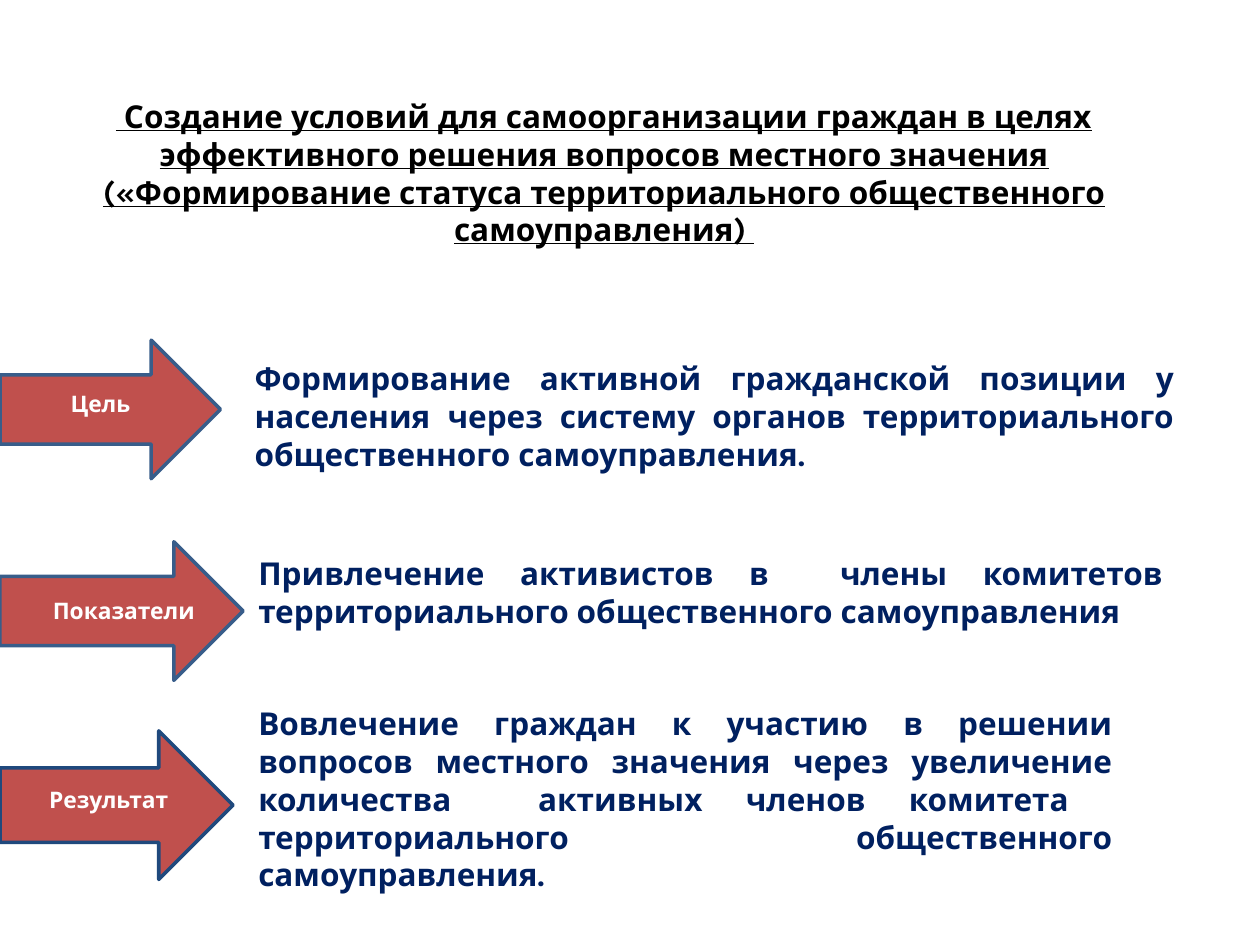
"""Build a slide with a goal, indicators and a result for local self-government."""
import dataclasses
import typing

import pptx
import pptx.dml.color
import pptx.enum.shapes
import pptx.enum.text
import pptx.util

Inches = pptx.util.Inches
Align = pptx.enum.text.PP_ALIGN
Box = typing.Tuple[float, float, float, float]

FONT = "Karla"
HUES = {
    "red": "C0504D",
    "steel": "385D8A",
    "blue": "1F497D",
    "navy": "002060",
    "black": "000000",
    "white": "FFFFFF",
}
TITLE = (
    " Создание условий для самоорганизации граждан в целях эффективного решения "
    "вопросов местного значения («Формирование статуса территориального "
    "общественного самоуправления) "
)


@dataclasses.dataclass(frozen=True)
class Step:
    """One arrow with its label and statement."""

    label: str
    text: str
    arrow: Box
    tag: Box
    body: Box
    edge: str = "steel"


STEPS = [
    Step(
        "Цель ",
        "Формирование активной гражданской позиции у населения через систему "
        "органов территориального общественного самоуправления.",
        (0, 2.7, 1.75, 1.1), (-0.04, 3.04, 1.72, 0.31), (1.93, 2.8, 7.48, 1.01),
    ),
    Step(
        "Показатели ",
        "Привлечение активистов в  члены комитетов территориального "
        "общественного самоуправления",
        (0, 4.3, 1.93, 1.1), (0, 4.69, 2.01, 0.31), (1.96, 4.35, 7.36, 0.7),
    ),
    Step(
        "Результат ",
        "Вовлечение граждан к участию в решении вопросов местного значения через "
        "увеличение количества  активных членов комитета  территориального "
        "общественного самоуправления.",
        (0, 5.8, 1.85, 1.18), (0, 6.19, 1.77, 0.31), (1.96, 5.54, 6.96, 1.31),
        "blue",
    ),
]


def scale(box: Box) -> typing.List[int]:
    """Turn a box in inches into lengths."""
    return [Inches(side) for side in box]


def tint(name: str) -> pptx.dml.color.RGBColor:
    """Look up a colour by name."""
    return pptx.dml.color.RGBColor.from_string(HUES[name])


def write(shape, text: str, size: int, hue: str, align, line: bool = False) -> None:
    """Fill a shape with one bold run."""
    frame = shape.text_frame
    frame.word_wrap = True
    frame.auto_size = pptx.enum.text.MSO_AUTO_SIZE.NONE
    frame.vertical_anchor = pptx.enum.text.MSO_ANCHOR.TOP
    frame.margin_left = frame.margin_right = Inches(0.09)
    frame.margin_top = frame.margin_bottom = Inches(0.05)
    para = frame.paragraphs[0]
    para.alignment = align
    run = para.add_run()
    run.text = text
    font = run.font
    font.name = FONT
    font.size = pptx.util.Pt(size)
    font.bold = True
    font.underline = line
    font.color.rgb = tint(hue)


def head(slide) -> None:
    """Place and fill the title."""
    title = slide.shapes.title
    title.left, title.top, title.width, title.height = scale((0.03, 0.72, 9.53, 1.3))
    write(title, TITLE, 18, "black", Align.CENTER, True)


def draw(slide, step: Step) -> None:
    """Draw one arrow, its label and its statement."""
    kind = pptx.enum.shapes.MSO_SHAPE.RIGHT_ARROW
    arrow = slide.shapes.add_shape(kind, *scale(step.arrow))
    arrow.shadow.inherit = False
    arrow.fill.solid()
    arrow.fill.fore_color.rgb = tint("red")
    arrow.line.color.rgb = tint(step.edge)
    arrow.line.width = pptx.util.Pt(2)
    tag = slide.shapes.add_textbox(*scale(step.tag))
    write(tag, step.label, 13, "white", Align.CENTER)
    body = slide.shapes.add_textbox(*scale(step.body))
    write(body, step.text, 18, "navy", Align.JUSTIFY)


def main() -> None:
    """Build and save the deck."""
    deck = pptx.Presentation()
    deck.slide_width, deck.slide_height = Inches(10), Inches(7.5)
    slide = deck.slides.add_slide(deck.slide_layouts[5])
    head(slide)
    for step in STEPS:
        draw(slide, step)
    deck.save("out.pptx")


if __name__ == "__main__":
    main()
